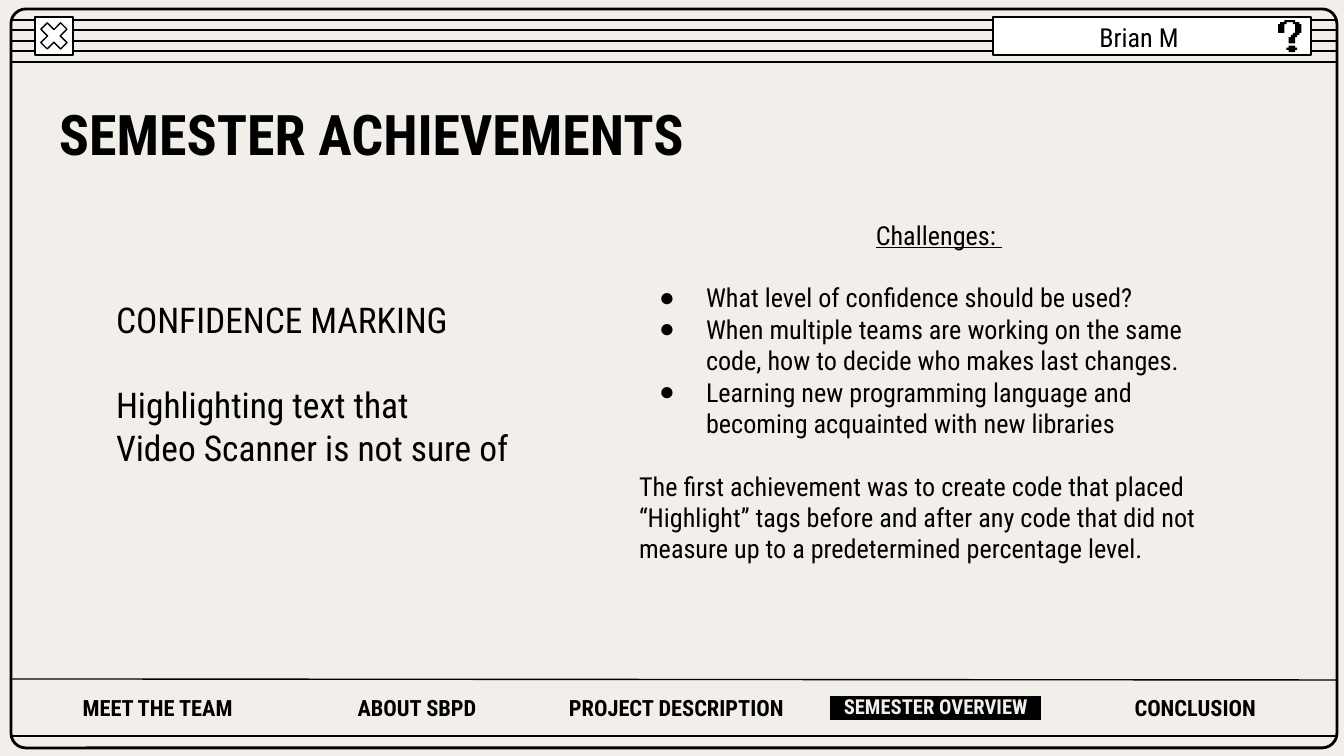
from lxml import etree
from pptx import Presentation
from pptx.dml.color import RGBColor
from pptx.enum.shapes import MSO_CONNECTOR, MSO_SHAPE
from pptx.enum.text import MSO_ANCHOR, MSO_AUTO_SIZE, PP_ALIGN
from pptx.oxml.ns import qn
from pptx.util import Pt

LINE = MSO_CONNECTOR.STRAIGHT
RECT, ROUND, CROSS = (MSO_SHAPE.RECTANGLE, MSO_SHAPE.ROUNDED_RECTANGLE,
                      MSO_SHAPE.MATH_MULTIPLY)
LEFT, MID = PP_ALIGN.LEFT, PP_ALIGN.CENTER
TOP = MSO_ANCHOR.TOP
NO_FIT = MSO_AUTO_SIZE.NONE

INK = RGBColor(0x00, 0x00, 0x00)
PAPER = RGBColor(0xF2, 0xEF, 0xEB)
WHITE = RGBColor(0xFF, 0xFF, 0xFF)
FONT = "Roboto Condensed"
PLAIN_GRID = "{2D5ABB26-0587-4C30-8999-92F81FD0307C}"

PX = 9144000 / 1344
PAD = 13

# Question mark outlines, in cells of a grid 15 cells high
HOOK = [(3, 0), (3, 1), (1, 1), (1, 2), (0, 2), (0, 6), (3, 6), (3, 2),
        (4, 2), (4, 1), (7, 1), (7, 2), (8, 2), (8, 6), (7, 6), (7, 7),
        (6, 7), (6, 8), (5, 8), (5, 11), (8, 11), (8, 8), (9, 8), (9, 7),
        (10, 7), (10, 6), (11, 6), (11, 2), (10, 2), (10, 1), (8, 1), (8, 0)]
DOT = [(5, 12), (5, 13), (4, 13), (4, 14), (5, 14), (5, 15),
       (8, 15), (8, 14), (9, 14), (9, 13), (8, 13), (8, 12)]

TABS = ["MEET THE TEAM", "ABOUT SBPD", "PROJECT DESCRIPTION",
        "SEMESTER OVERVIEW", "CONCLUSION"]
ACTIVE = 3
GOALS = ["CONFIDENCE MARKING", "Highlighting text that",
         "Video Scanner is not sure of"]
HEAD = "Challenges: "
POINTS = [
    "What level of confidence should be used?",
    "When multiple teams are working on the same code, "
    "how to decide who makes last changes.",
    "Learning new programming language and "
    "becoming acquainted with new libraries",
]
CLOSE = ("The first achievement was to create code that placed “Highlight” "
         "tags before and after any code that did not measure up to a "
         "predetermined percentage level.")


def emu(*sizes):
    return [round(size * PX) for size in sizes]


def rule(slide, x1, y1, x2, y2):
    line = slide.shapes.add_connector(LINE, *emu(x1, y1, x2, y2))
    line.line.color.rgb = INK
    line.line.width = Pt(0.75)
    etree.SubElement(line._element.spPr, qn("a:effectLst"))


def block(slide, kind, box, fill=WHITE, width=0.75):
    shape = slide.shapes.add_shape(kind, *emu(*box))
    shape.shadow.inherit = False
    if fill is None:
        shape.fill.background()
    else:
        shape.fill.solid()
        shape.fill.fore_color.rgb = fill
    shape.line.color.rgb = INK
    shape.line.width = Pt(width)
    return shape


def style(run, size, bold=False, color=INK):
    font = run.font
    font.name, font.size, font.bold = FONT, Pt(size), bold
    font.color.rgb = color


def write(shape, box, texts, size, align=LEFT, bold=False, head=PAD):
    """Place a text shape and fill it with plain paragraphs."""
    shape.left, shape.top, shape.width, shape.height = emu(*box)
    frame = shape.text_frame
    frame.text = "\n".join(texts)
    frame.word_wrap, frame.auto_size = True, NO_FIT
    frame.vertical_anchor = TOP
    frame.margin_left, frame.margin_right = emu(PAD, PAD)
    frame.margin_top, frame.margin_bottom = emu(head, PAD)
    for par in frame.paragraphs:
        par.alignment = align
        par.space_before = Pt(0)
        style(par.runs[0], size, bold)
    return frame.paragraphs


def bullet(par, left=0, hang=0, mark=None):
    props = par._p.get_or_add_pPr()
    props.set("marL", str(round(left * PX)))
    props.set("indent", str(round(-hang * PX)))
    if mark is None:
        etree.SubElement(props, qn("a:buNone"))
        return
    tint = etree.SubElement(props, qn("a:buClr"))
    etree.SubElement(tint, qn("a:srgbClr"), val=str(INK))
    etree.SubElement(props, qn("a:buChar"), char=mark)


def window(slide, x, y, w, h):
    # Title bar stripes, frame and bottom rule
    for i in range(5):
        stripe = y + 11 + i * 21 // 2
        rule(slide, x, stripe, x + w, stripe)
    frame = block(slide, ROUND, (x, y, w, h), None, 1.5)
    frame.adjustments[0] = 0.02
    rule(slide, x, y + h - 12, x + w, y + h - 12)
    # Close button
    for kind in (RECT, CROSS):
        block(slide, kind, (x + 24, y + 8, 38, 38))


def name_bar(slide, x, y, w, h):
    block(slide, RECT, (x, y, w, h))
    # Pixel question mark
    for points in (HOOK, DOT):
        pen = slide.shapes.build_freeform(*points[0], scale=32 * PX / 15)
        pen.add_line_segments(points[1:], close=True)
        glyph = pen.convert_to_shape(*emu(x + w - 33, y + 3))
        glyph.shadow.inherit = False
        glyph.fill.solid()
        glyph.fill.fore_color.rgb = INK
        glyph.line.fill.background()
    label = slide.shapes.add_textbox(0, 0, 0, 0)
    write(label, (x + 15, y - 9, 262, 56), ["Brian M"], 14, MID)


def goals(shape, *box):
    pars = write(shape, box, GOALS, 19)
    for par in pars:
        bullet(par)
    pars[1].space_before = Pt(22.8)


def hurdles(shape, *box):
    pars = write(shape, box, [HEAD, *POINTS, CLOSE], 14, head=PAD + 31)
    first, *items, last = pars
    first.alignment = MID
    first.runs[0].font.underline = True
    for par in (items[0], last):
        par.space_before = Pt(16.8)
    for par in (first, last):
        bullet(par)
    for par in items:
        bullet(par, 67, 47, "●")


def mark(run):
    """Give a coloured run a black highlight."""
    glow = etree.Element(qn("a:highlight"))
    etree.SubElement(glow, qn("a:srgbClr"), val=str(INK))
    run._r.rPr.find(qn("a:solidFill")).addnext(glow)


def tab_bar(slide, x, y, w, h):
    rule(slide, x - 18, y - 4, x + w + 11, y - 3)
    table = slide.shapes.add_table(1, len(TABS), *emu(x, y, w, h)).table
    table.first_row = table.horz_banding = False
    table._tbl.tblPr.find(qn("a:tableStyleId")).text = PLAIN_GRID
    for i, text in enumerate(TABS):
        cell = table.cell(0, i)
        cell.fill.background()
        cell.margin_left, cell.margin_right = emu(PAD, PAD)
        cell.margin_top, cell.margin_bottom = emu(PAD, PAD)
        par = cell.text_frame.paragraphs[0]
        par.alignment = MID
        if i != ACTIVE:
            par.text = text
            style(par.runs[0], 12, True)
            continue
        # Dashes widen the highlighted tab
        for part, color in (("—", INK), (text, PAPER), ("—", INK)):
            run = par.add_run()
            run.text = part
            style(run, 11, True, color)
            mark(run)


def main():
    deck = Presentation()
    deck.slide_width, deck.slide_height = emu(1344, 756)
    slide = deck.slides.add_slide(deck.slide_layouts[3])
    slide.background.fill.solid()
    slide.background.fill.fore_color.rgb = PAPER
    title, left, right = slide.placeholders

    window(slide, 11, 9, 1326, 739)
    name_bar(slide, 993, 17, 318, 38)
    write(title, (46, 87, 664, 95), ["SEMESTER ACHIEVEMENTS"], 30, bold=True)
    goals(left, 103, 285, 425, 242)
    hurdles(right, 626, 175, 626, 407)
    tab_bar(slide, 28, 683, 1297, 56)
    deck.save("out.pptx")


if __name__ == "__main__":
    main()
